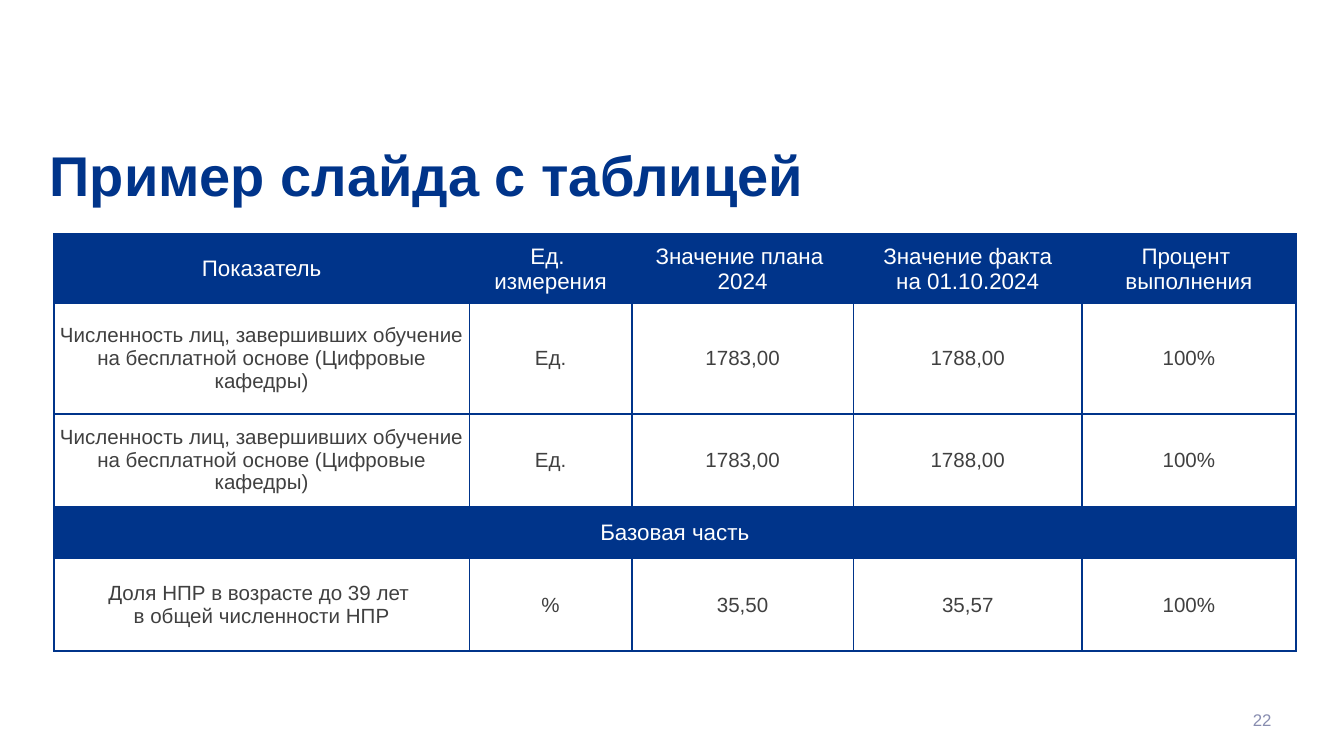
from copy import deepcopy

from pptx import Presentation
from pptx import util as u
from pptx.dml.color import RGBColor
from pptx.enum import text
from pptx.oxml import parse_xml
from pptx.oxml.ns import nsdecls, qn

COLUMN_WIDTHS = [7.85, 3.07, 4.19, 4.32, 4.04]
ROW_HEIGHTS = [1.32, 2.08, 1.75, 0.99, 1.75]
GRADUATES = ["Численность лиц, завершивших обучение на бесплатной основе (Цифровые кафедры)",
             "Ед.", "1783,00", "1788,00", "100%"]
ROWS = [
    ["Показатель", "Ед. \nизмерения", "Значение плана \n2024",
     "Значение факта\nна 01.10.2024", "Процент \nвыполнения"],
    GRADUATES,
    GRADUATES,
    ["Базовая часть"],
    ["Доля НПР в возрасте до 39 лет \nв общей численности НПР",
     "%", "35,50", "35,57", "100%"],
]
BAND_ROWS = {0, 3}


def color(value):
    return RGBColor.from_string(value)


class SlideBuilder:
    font = "Arial"
    blue = "00348A"
    white = "FFFFFF"
    dark = "404040"
    muted = "888DB0"

    def __init__(self, deck):
        self.slide = deck.slides.add_slide(deck.slide_layouts[5])

    def put_text(self, frame, words, size, hue, align, bold=False):
        para = frame.paragraphs[0]
        para.text = words
        para.alignment = align
        for span in para.runs:
            span.font.name = self.font
            span.font.size = u.Pt(size)
            span.font.bold = bold
            span.font.color.rgb = color(hue)
        # Line breaks need the run format too, or they stretch the line.
        for line_break in para._p.findall(qn("a:br")):
            line_break.append(deepcopy(para.runs[0]._r.rPr))
        return para

    def set_margins(self, holder):
        """Apply the common insets to a text frame or a table cell."""
        holder.margin_left = holder.margin_right = u.Cm(0.1)
        holder.margin_top = holder.margin_bottom = u.Cm(0.05)
        holder.vertical_anchor = text.MSO_ANCHOR.MIDDLE

    def title(self, words, left, top, width, height):
        box = self.slide.shapes.title
        box.left, box.top, box.width, box.height = map(u.Cm, (left, top, width, height))
        self.set_margins(box.text_frame)
        para = self.put_text(box.text_frame, words, 30, self.blue, text.PP_ALIGN.LEFT, bold=True)
        para.line_spacing = 0.9

    def page_number(self, words, left, top, width, height):
        box = self.slide.shapes.add_textbox(*map(u.Cm, (left, top, width, height)))
        box.text_frame.word_wrap = True
        self.set_margins(box.text_frame)
        self.put_text(box.text_frame, words, 9, self.muted, text.PP_ALIGN.RIGHT)

    def style_cell(self, cell, is_band):
        self.set_margins(cell)
        properties = cell._tc.get_or_add_tcPr()
        for side in ("lnL", "lnR", "lnT", "lnB"):
            properties.append(parse_xml(
                f'<a:{side} {nsdecls("a")} w="{u.Pt(1)}"><a:solidFill>'
                f'<a:srgbClr val="{self.blue}"/></a:solidFill></a:{side}>'))
        cell.fill.solid()
        cell.fill.fore_color.rgb = color(self.blue if is_band else self.white)

    def table(self, rows, left, top, widths, heights):
        table = self.slide.shapes.add_table(
            len(heights), len(widths), u.Cm(left), u.Cm(top),
            u.Cm(sum(widths)), u.Cm(sum(heights))).table
        for column, width in zip(table.columns, widths):
            column.width = u.Cm(width)
        for index, (row, height, words) in enumerate(zip(table.rows, heights, rows)):
            row.height = u.Cm(height)
            is_band = index in BAND_ROWS
            size, hue = (12, self.white) if is_band else (11, self.dark)
            for cell in row.cells:
                self.style_cell(cell, is_band)
            for cell, entry in zip(row.cells, words):
                self.put_text(cell.text_frame, entry, size, hue, text.PP_ALIGN.CENTER)
            if len(words) == 1:
                table.cell(index, 0).merge(table.cell(index, len(widths) - 1))


def main():
    deck = Presentation()
    deck.slide_width, deck.slide_height = u.Cm(25.4), u.Cm(14.29)
    page = SlideBuilder(deck)
    page.table(ROWS, 1.02, 4.42, COLUMN_WIDTHS, ROW_HEIGHTS)
    page.title("Пример слайда с таблицей", 0.84, 2.57, 22.89, 1.6)
    page.page_number("22", 17.93, 13.23, 6.2, 0.76)
    deck.save("out.pptx")


if __name__ == "__main__":
    main()
